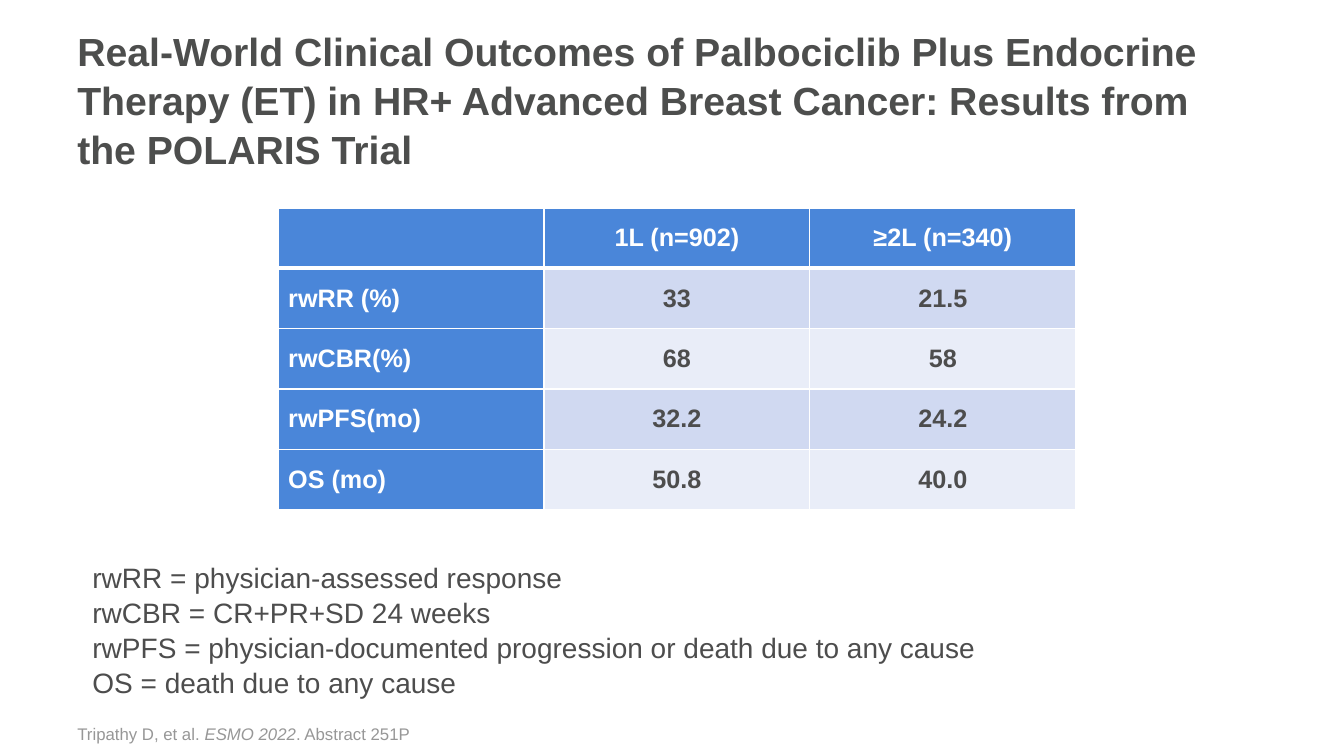
from dataclasses import dataclass

from lxml import etree
from pptx import Presentation
from pptx.dml.color import RGBColor
from pptx.enum.text import MSO_ANCHOR, PP_ALIGN
from pptx.oxml.ns import qn
from pptx.util import Cm, Pt

TOP, MIDDLE, BOTTOM = MSO_ANCHOR.TOP, MSO_ANCHOR.MIDDLE, MSO_ANCHOR.BOTTOM
LEFT, CENTER = PP_ALIGN.LEFT, PP_ALIGN.CENTER


@dataclass(frozen=True)
class Theme:
    font: str = "Arial"
    title: str = "4D4E4D"
    body: str = "4D4D4D"
    muted: str = "979797"
    white: str = "FFFFFF"
    header: str = "4A86D9"
    bands: tuple = ("D0D9F1", "E9EDF8")
    title_size: int = 28
    body_size: int = 20
    table_size: int = 18
    source_size: int = 12
    spacing: float = 1.04


class SlideBuilder:
    def __init__(self, page, theme):
        self.page = page
        self.theme = theme

    def add_span(self, para, text, size, color, bold=False, italic=False):
        span = para.add_run()
        span.text = text
        span.font.name = self.theme.font
        span.font.size = Pt(size)
        span.font.color.rgb = RGBColor.from_string(color)
        span.font.bold = bold
        span.font.italic = italic

    def add_text(self, area, lines, size, color, anchor=TOP, bold=False, wrap=True):
        """Each line is a list of (text, italic) pairs."""
        box = self.page.shapes.add_textbox(*(Cm(length) for length in area))
        frame = box.text_frame
        frame.word_wrap = wrap
        frame.vertical_anchor = anchor
        for index, line in enumerate(lines):
            para = frame.add_paragraph() if index else frame.paragraphs[0]
            para.line_spacing = self.theme.spacing
            for text, italic in line:
                self.add_span(para, text, size, color, bold, italic)

    def set_borders(self, cell, bottom_width):
        properties = cell._tc.get_or_add_tcPr()
        widths = {"a:lnL": 1, "a:lnR": 1, "a:lnT": 1, "a:lnB": bottom_width}
        for position, (tag, width) in enumerate(widths.items()):
            line = etree.Element(qn(tag), w=str(Pt(width)))
            fill = etree.SubElement(line, qn("a:solidFill"))
            etree.SubElement(fill, qn("a:srgbClr"), val=self.theme.white)
            properties.insert(position, line)

    def add_table(self, area, rows):
        theme = self.theme
        lengths = [Cm(length) for length in area]
        table = self.page.shapes.add_table(len(rows), len(rows[0]), *lengths).table
        for row_index, row in enumerate(rows):
            for column_index, text in enumerate(row):
                cell = table.cell(row_index, column_index)
                heading = row_index == 0 or column_index == 0
                band = theme.bands[(row_index - 1) % 2]
                cell.fill.solid()
                cell.fill.fore_color.rgb = RGBColor.from_string(
                    theme.header if heading else band)
                cell.vertical_anchor = MIDDLE
                self.set_borders(cell, 1 if row_index else 3)
                if text:
                    para = cell.text_frame.paragraphs[0]
                    para.alignment = CENTER if column_index else LEFT
                    self.add_span(para, text, theme.table_size,
                                  theme.white if heading else theme.body, bold=True)


def main():
    deck = Presentation()
    deck.slide_width, deck.slide_height = Cm(33.87), Cm(19.05)
    theme = Theme()
    builder = SlideBuilder(deck.slides.add_slide(deck.slide_layouts[6]), theme)

    # Title
    title = ("Real-World Clinical Outcomes of Palbociclib Plus Endocrine Therapy (ET) "
             "in HR+ Advanced Breast Cancer: Results from the POLARIS Trial")
    builder.add_text((1.7, 0.84, 29.85, 3.3), [[(title, False)]],
                     theme.title_size, theme.title, MIDDLE, bold=True)

    # Outcomes by line of therapy
    builder.add_table((7.01, 5.24, 20.1, 7.6), [
        ("", "1L (n=902)", "≥2L (n=340)"),
        ("rwRR (%)", "33", "21.5"),
        ("rwCBR(%)", "68", "58"),
        ("rwPFS(mo)", "32.2", "24.2"),
        ("OS (mo)", "50.8", "40.0"),
    ])

    # Definitions of the outcome measures
    definitions = (
        "rwRR = physician-assessed response",
        "rwCBR = CR+PR+SD 24 weeks",
        "rwPFS = physician-documented progression or death due to any cause",
        "OS = death due to any cause",
    )
    builder.add_text((2.08, 13.97, 22.94, 3.68), [[(text, False)] for text in definitions],
                     theme.body_size, theme.body, wrap=False)

    # Source
    source = [("Tripathy D, et al. ", False), ("ESMO 2022", True), (". Abstract 251P", False)]
    builder.add_text((1.7, 17.65, 29.85, 1.22), [source],
                     theme.source_size, theme.muted, BOTTOM)

    deck.save("out.pptx")


if __name__ == "__main__":
    main()
